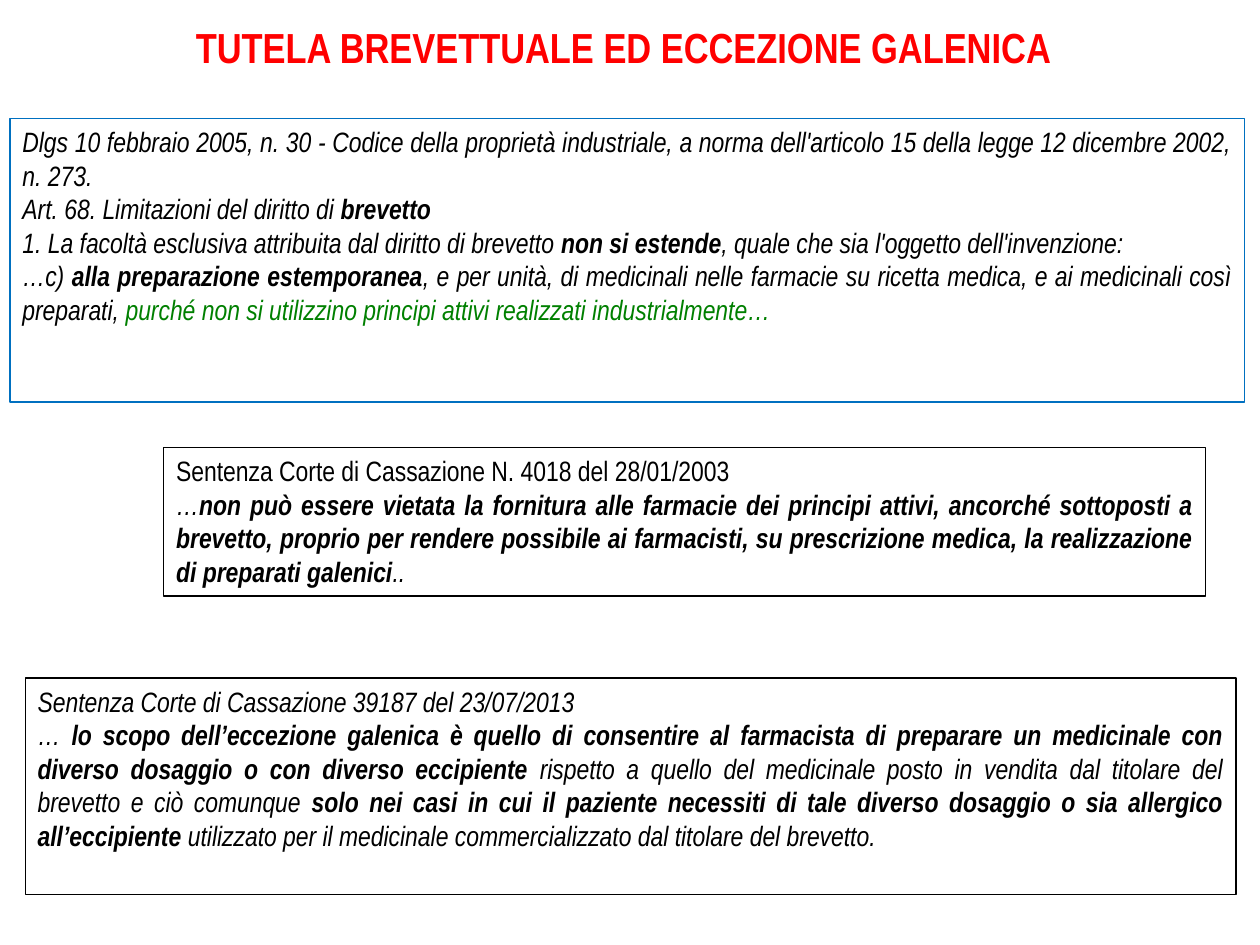
"""Build a slide on patent protection and the galenic exception."""
from dataclasses import dataclass
from typing import NamedTuple

from pptx import Presentation
from pptx.dml.color import RGBColor
from pptx.enum.shapes import MSO_SHAPE as Shape
from pptx.enum.text import MSO_ANCHOR as Anchor, MSO_AUTO_SIZE as Fit, PP_ALIGN as Align
from pptx.util import Pt


class Run(NamedTuple):
    text: str
    bold: bool = False
    italic: bool = True
    color: str = "000000"
    size: float = 16


class Para(NamedTuple):
    runs: list[Run]
    align: Align = Align.JUSTIFY
    before: float = 0


@dataclass
class Box:
    left: float
    top: float
    width: float
    height: float
    paras: list[Para]
    line: str = ""


BOXES = [
    Box(5.76, 67.68, 705.6, 162, [
        Para([Run("Dlgs 10 febbraio 2005, n. 30 - Codice della proprietà industriale, "
                  "a norma dell'articolo 15 della legge 12 dicembre 2002, n. 273. ")]),
        Para([Run("Art. 68. Limitazioni del diritto di "), Run("brevetto ", bold=True)]),
        Para([Run("1. La facoltà esclusiva attribuita dal diritto di brevetto "),
              Run("non si estende", bold=True),
              Run(", quale che sia l'oggetto dell'invenzione:")]),
        Para([Run("…c) "), Run("alla preparazione estemporanea", bold=True),
              Run(", e per unità, di medicinali nelle farmacie su ricetta medica, "
                  "e ai medicinali così preparati, "),
              Run("purché non si utilizzino principi attivi realizzati industrialmente…",
                  color="008000")]),
    ], "0070C0"),
    Box(93.6, 255.6, 595.44, 84.96, [
        Para([Run("Sentenza Corte di Cassazione N. 4018 del 28/01/2003", italic=False)],
             Align.LEFT),
        Para([Run("…"),
              Run("non può essere vietata la fornitura alle farmacie dei principi attivi, "
                  "ancorché sottoposti a brevetto, proprio per rendere possibile ai "
                  "farmacisti, su prescrizione medica, la realizzazione di preparati "
                  "galenici", bold=True),
              Run("..")]),
    ], "000000"),
    Box(14.4, 387.36, 691.92, 123.84, [
        Para([Run("Sentenza Corte di Cassazione 39187 del 23/07/2013")]),
        Para([Run("… "),
              Run("lo scopo dell’eccezione galenica è quello di consentire al farmacista "
                  "di preparare un medicinale con diverso dosaggio o con diverso "
                  "eccipiente ", bold=True),
              Run("rispetto a quello del medicinale posto in vendita dal titolare del "
                  "brevetto e ciò comunque "),
              Run("solo nei casi in cui il paziente necessiti di tale diverso dosaggio "
                  "o sia allergico all’eccipiente ", bold=True),
              Run("utilizzato per il medicinale commercializzato dal titolare del "
                  "brevetto.")]),
    ], "000000"),
    Box(29.52, 8.64, 653.76, 36.72, [
        Para([Run("TUTELA BREVETTUALE ED ECCEZIONE GALENICA", True, False, "FF0000", 24)],
             Align.CENTER, 6),
    ]),
]


def paint(target, color: str) -> None:
    target.rgb = RGBColor.from_string(color)


def assign(target, values: dict) -> None:
    for name, value in values.items():
        setattr(target, name, value)


def write(frame, paras: list[Para]) -> None:
    assign(frame, {"word_wrap": True, "auto_size": Fit.NONE,
                   "vertical_anchor": Anchor.TOP})
    for i, para in enumerate(paras):
        item = frame.add_paragraph() if i else frame.paragraphs[0]
        assign(item, {"alignment": para.align, "space_before": Pt(para.before)})
        for run in para.runs:
            part = item.add_run()
            part.text = run.text
            assign(part.font, {"name": "Arial Narrow", "size": Pt(run.size),
                               "bold": run.bold, "italic": run.italic})
            paint(part.font.color, run.color)


def draw(shapes, box: Box) -> None:
    area = [Pt(n) for n in (box.left, box.top, box.width, box.height)]
    if box.line:
        shape = shapes.add_shape(Shape.RECTANGLE, *area)
        shape.shadow.inherit = False
        shape.fill.background()
        shape.line.width = Pt(0.75)
        paint(shape.line.color, box.line)
    else:
        shape = shapes.add_textbox(*area)
    write(shape.text_frame, box.paras)


def main() -> None:
    deck = Presentation()
    assign(deck, {"slide_width": Pt(720), "slide_height": Pt(540)})
    slide = deck.slides.add_slide(deck.slide_layouts[6])
    for box in BOXES:
        draw(slide.shapes, box)
    deck.save("out.pptx")


if __name__ == "__main__":
    main()
